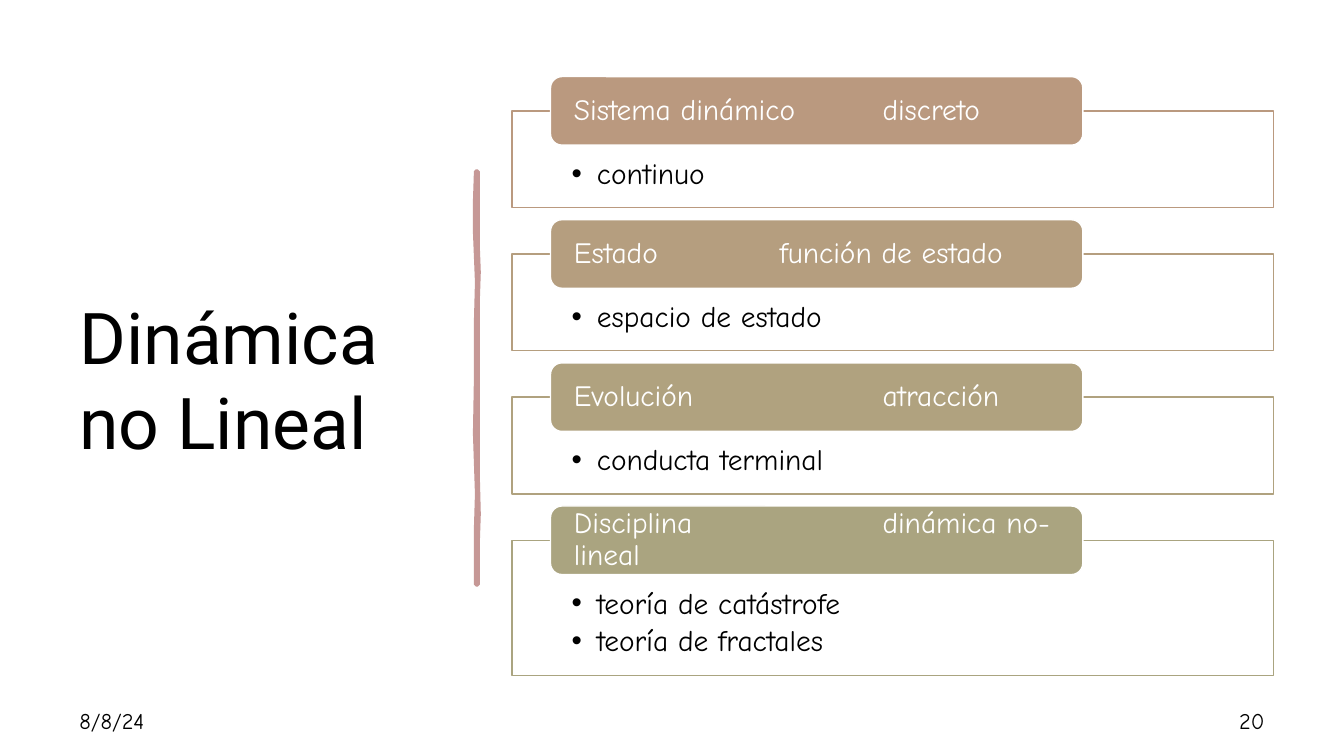
"""Build the slide on nonlinear dynamics: a title, a hand-drawn rule and four headed boxes."""
import pptx
import pptx.dml.color
import pptx.enum.shapes
import pptx.enum.text
import pptx.util
from lxml import etree

Inches, Pt = pptx.util.Inches, pptx.util.Pt
RGBColor = pptx.dml.color.RGBColor
MSO_SHAPE = pptx.enum.shapes.MSO_SHAPE
PP_ALIGN = pptx.enum.text.PP_ALIGN
MSO_ANCHOR = pptx.enum.text.MSO_ANCHOR

BLACK = RGBColor(0x00, 0x00, 0x00)
WHITE = RGBColor(0xFF, 0xFF, 0xFF)
ROSE = RGBColor(0xC6, 0x98, 0x96)
CLAY = RGBColor(0xBA, 0x99, 0x7F)
SAND = RGBColor(0xB5, 0x9E, 0x7F)
KHAKI = RGBColor(0xB0, 0xA2, 0x7F)
OLIVE = RGBColor(0xAA, 0xA4, 0x80)
BODY_FONT = "Comic Neue"
A = "{http://schemas.openxmlformats.org/drawingml/2006/main}"

W, H = 13.33, 7.5
MARGIN = 0.69
BOX_X, BOX_W = 5.08, 7.55
HEAD_X, HEAD_W, HEAD_H = 5.46, 5.28, 0.68
TOP, PITCH, OVERLAP = 0.76, 1.42, 0.34
TAB = 1.02


def add_run(p, text, size, color, font=BODY_FONT):
    r = p.add_run()
    r.text = text
    r.font.size = Pt(size)
    r.font.name = font
    r.font.color.rgb = color


def style_shape(sp, fill, line, width):
    sp.shadow.inherit = False
    sp.fill.solid()
    sp.fill.fore_color.rgb = fill
    sp.line.color.rgb = line
    sp.line.width = Pt(width)


prs = pptx.Presentation()
prs.slide_width, prs.slide_height = Inches(W), Inches(H)
s = prs.slides.add_slide(prs.slide_layouts[6])

labels = [
    ("Dinámica no Lineal", MARGIN, 0.7, 3.74, 6.11, 51, "Roboto", PP_ALIGN.LEFT),
    ("8/8/24", MARGIN, 6.95, 3, 0.4, 16, BODY_FONT, PP_ALIGN.LEFT),
    ("20", W - MARGIN - 2, 6.95, 2, 0.4, 16, BODY_FONT, PP_ALIGN.RIGHT),
]
for text, x, y, w, h, size, font, align in labels:
    tf = s.shapes.add_textbox(Inches(x), Inches(y), Inches(w), Inches(h)).text_frame
    tf.word_wrap = True
    tf.vertical_anchor = MSO_ANCHOR.MIDDLE
    p = tf.paragraphs[0]
    p.alignment = align
    add_run(p, text, size, BLACK, font)

right_edge = [(4.74, 1.7), (4.74, 2.0), (4.74, 2.43), (4.75, 2.7), (4.74, 3.0), (4.74, 3.6),
              (4.74, 4.36), (4.74, 4.7), (4.75, 5.1), (4.74, 5.4), (4.74, 5.8)]
left_edge = [(4.72, 5.8), (4.72, 5.24), (4.73, 4.9), (4.71, 4.3), (4.72, 3.75),
             (4.72, 3.19), (4.73, 2.8), (4.71, 2.3), (4.71, 2.0), (4.72, 1.7)]
fb = s.shapes.build_freeform(Inches(4.72), Inches(1.7))
fb.add_line_segments([(Inches(x), Inches(y)) for x, y in right_edge + left_edge])
style_shape(fb.convert_to_shape(), ROSE, ROSE, 2.75)

rows = [
    ("Sistema dinámico\tdiscreto", ["continuo"], CLAY, 0.96),
    ("Estado\t\tfunción de estado", ["espacio de estado"], SAND, 0.96),
    ("Evolución\t\tatracción", ["conducta terminal"], KHAKI, 0.96),
    ("Disciplina\t\tdinámica no-lineal", ["teoría de catástrofe", "teoría de fractales"], OLIVE, 1.34),
]
for i, (heading, items, color, box_h) in enumerate(rows):
    y = TOP + i * PITCH

    box = s.shapes.add_shape(MSO_SHAPE.RECTANGLE, Inches(BOX_X), Inches(y + OVERLAP),
                             Inches(BOX_W), Inches(box_h))
    style_shape(box, WHITE, color, 1)
    tf = box.text_frame
    tf.word_wrap = True
    tf.vertical_anchor = MSO_ANCHOR.TOP
    tf.margin_left = tf.margin_right = Inches(0.59)
    tf.margin_top, tf.margin_bottom = Inches(0.48), Inches(0.16)
    for j, item in enumerate(items):
        p = tf.add_paragraph() if j else tf.paragraphs[0]
        p.alignment = PP_ALIGN.LEFT
        p.line_spacing = 0.9
        p.space_after = Pt(4)
        pPr = p._p.get_or_add_pPr()
        pPr.set("marL", str(Inches(0.25)))
        pPr.set("indent", str(-Inches(0.25)))
        etree.SubElement(pPr, A + "buFont", typeface="Arial")
        etree.SubElement(pPr, A + "buChar", char="•")
        add_run(p, item, 21, BLACK)

    head = s.shapes.add_shape(MSO_SHAPE.ROUNDED_RECTANGLE, Inches(HEAD_X), Inches(y),
                              Inches(HEAD_W), Inches(HEAD_H))
    style_shape(head, color, WHITE, 1)
    tf = head.text_frame
    tf.word_wrap = True
    tf.vertical_anchor = MSO_ANCHOR.MIDDLE
    tf.margin_left = tf.margin_right = Inches(0.2)
    tf.margin_top = tf.margin_bottom = 0
    p = tf.paragraphs[0]
    p.alignment = PP_ALIGN.LEFT
    p.line_spacing = 0.9
    tabs = etree.SubElement(p._p.get_or_add_pPr(), A + "tabLst")
    for n in range(1, 5):
        etree.SubElement(tabs, A + "tab", pos=str(Inches(n * TAB)), algn="l")
    add_run(p, heading, 21, WHITE)

prs.save("out.pptx")
